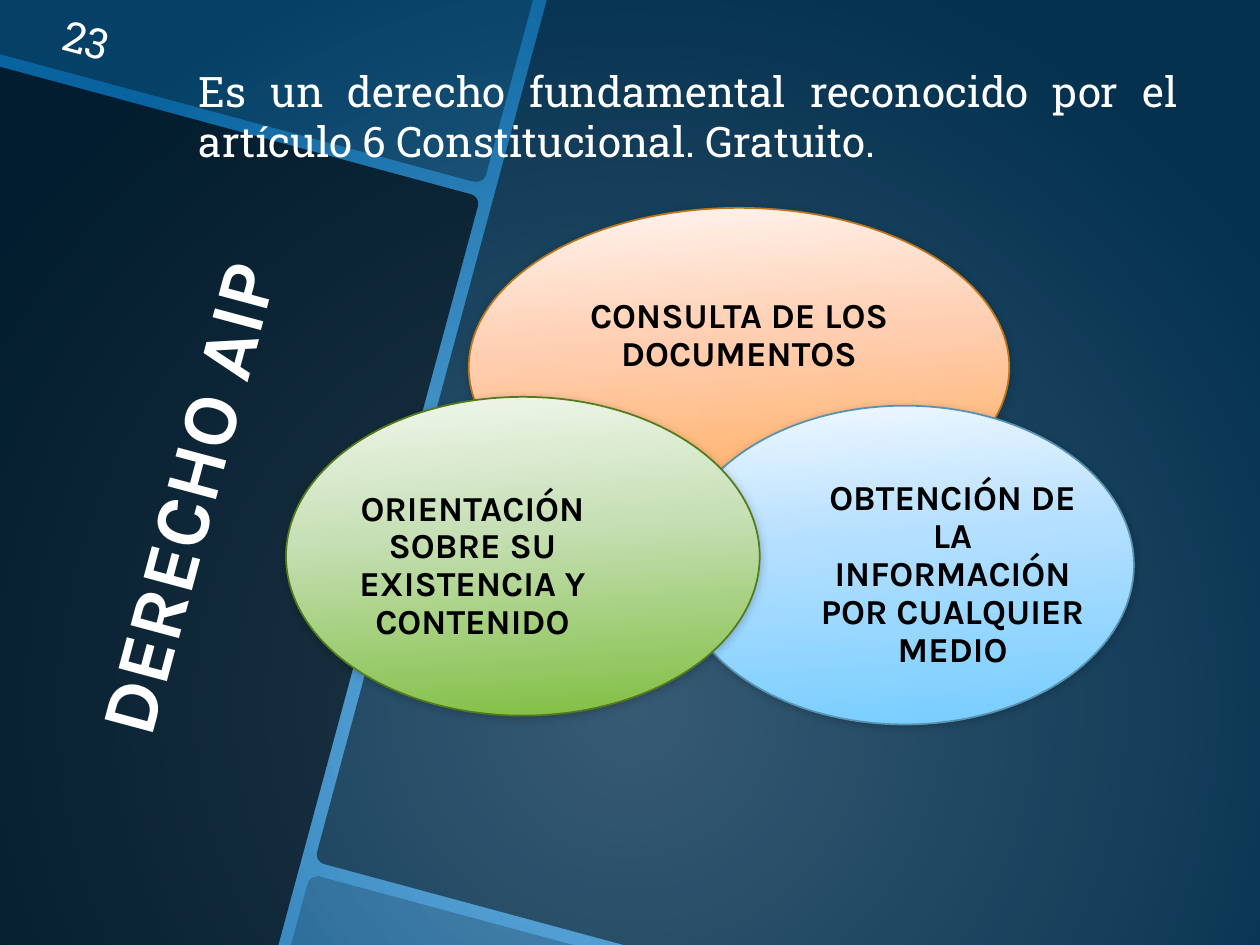
"""Build the slide on the right of access to public information."""
import dataclasses

import pptx
import pptx.dml.color
import pptx.enum.shapes
import pptx.enum.text
import pptx.oxml
import pptx.oxml.ns
import pptx.util
from lxml import etree

Inches = pptx.util.Inches
Pt = pptx.util.Pt
ALIGN = pptx.enum.text.PP_ALIGN
ANCHOR = pptx.enum.text.MSO_ANCHOR
qn = pptx.oxml.ns.qn


@dataclasses.dataclass(frozen=True)
class Theme:
    heading_font: str = "Karla"
    body_font: str = "Roboto Slab"
    title_size: int = 44
    body_size: int = 24
    label_size: int = 20
    light: str = "FFFFFF"
    dark: str = "000000"
    background: tuple = ((0, "70B6E8"), (100, "08639E"))
    orange: tuple = ("FFF4EF", "FFCEB1", "FFA84F", "BC7619")
    blue: tuple = ("F0F8FF", "B4DFFF", "75CDFF", "5792B1")
    green: tuple = ("F1F7ED", "C6DFB5", "7FBE3F", "537A1B")


def rgb(color):
    return pptx.dml.color.RGBColor.from_string(color)


def replace_gradient(element, stops, direction):
    gradient = element.find(".//" + qn("a:gradFill"))
    stop_xml = "".join(
        f'<a:gs pos="{position * 1000}"><a:srgbClr val="{color}"/></a:gs>'
        for position, color in stops)
    new_gradient = pptx.oxml.parse_xml(
        f'<a:gradFill {pptx.oxml.ns.nsdecls("a")} rotWithShape="1">'
        f"<a:gsLst>{stop_xml}</a:gsLst>{direction}</a:gradFill>")
    gradient.getparent().replace(gradient, new_gradient)


def bezier(start, control_1, control_2, end, steps=8):
    for step in range(1, steps + 1):
        t = step / steps
        weights = ((1 - t) ** 3, 3 * t * (1 - t) ** 2, 3 * t * t * (1 - t), t ** 3)
        points = (start, control_1, control_2, end)
        yield tuple(sum(w * p[axis] for w, p in zip(weights, points)) for axis in (0, 1))


class SlideBuilder:
    def __init__(self, slide, theme):
        self.slide = slide
        self.theme = theme

    def background(self):
        self.slide.background.fill.gradient()
        replace_gradient(
            self.slide.element, self.theme.background,
            '<a:path path="circle"><a:fillToRect l="50000" t="50000" r="50000" b="0"/></a:path>')

    def panel(self, outline, opacity):
        points = [outline[0]]
        for segment in outline[1:]:
            if len(segment) == 3:
                points.extend(bezier(points[-1], *segment))
            else:
                points.append(segment)
        vertices = [(Inches(x), Inches(y)) for x, y in points]
        builder = self.slide.shapes.build_freeform(*vertices[0])
        builder.add_line_segments(vertices[1:], close=True)
        shape = builder.convert_to_shape()
        shape.shadow.inherit = False
        shape.line.fill.background()
        shape.fill.solid()
        shape.fill.fore_color.rgb = rgb(self.theme.dark)
        color = shape.fill._xPr.find(".//" + qn("a:srgbClr"))
        etree.SubElement(color, qn("a:alpha"), val=str(opacity * 1000))

    def ellipse(self, box, colors):
        *stops, outline = colors
        shape = self.slide.shapes.add_shape(
            pptx.enum.shapes.MSO_SHAPE.OVAL, *map(Inches, box))
        shape.fill.gradient()
        replace_gradient(shape.element, zip((0, 42, 100), stops),
                         '<a:lin ang="5160000" scaled="0"/>')
        shape.line.color.rgb = rgb(outline)
        shape.line.width = Pt(1)
        shape.shadow.inherit = False
        effects = shape.element.spPr.find(qn("a:effectLst"))
        shadow = etree.SubElement(
            effects, qn("a:outerShdw"), blurRad=str(Pt(5)), dist=str(Pt(1)),
            dir="5400000", rotWithShape="0")
        color = etree.SubElement(shadow, qn("a:srgbClr"), val=self.theme.dark)
        etree.SubElement(color, qn("a:alpha"), val="20000")

    def text(self, box, text, font, size, color, align, anchor=ANCHOR.MIDDLE,
             bold=False, rotation=0):
        shape = self.slide.shapes.add_textbox(*map(Inches, box))
        shape.rotation = rotation
        frame = shape.text_frame
        frame.word_wrap = True
        frame.vertical_anchor = anchor
        paragraph = frame.paragraphs[0]
        paragraph.text = text
        paragraph.alignment = align
        paragraph.font.name = font
        paragraph.font.size = Pt(size)
        paragraph.font.bold = bold
        paragraph.font.color.rgb = rgb(color)
        return frame

    def label(self, box, text):
        theme = self.theme
        frame = self.text(box, text, theme.heading_font, theme.label_size, theme.dark,
                          ALIGN.CENTER, bold=True)
        frame.margin_left = frame.margin_right = frame.margin_top = frame.margin_bottom = 0
        frame.paragraphs[0].line_spacing = 0.9


def main():
    presentation = pptx.Presentation()
    presentation.slide_width = Inches(10)
    presentation.slide_height = Inches(7.5)
    theme = Theme()
    builder = SlideBuilder(
        presentation.slides.add_slide(presentation.slide_layouts[6]), theme)

    builder.background()
    panels = (
        (70, [(0, 0.53), (3.73, 1.54), ((3.78, 1.55), (3.81, 1.6), (3.79, 1.65)),
              (2.21, 7.5), (0, 7.5)]),
        (35, [(0, 0), (4.23, 0), (3.86, 1.38),
              ((3.85, 1.43), (3.8, 1.45), (3.75, 1.44)), (0, 0.43)]),
        (20, [(2.51, 6.96), ((2.52, 6.95), (2.54, 6.95), (2.55, 6.96)), (4.55, 7.5),
              (2.31, 7.5), (2.44, 7.02), ((2.45, 6.98), (2.48, 6.96), (2.51, 6.96))]),
        (50, [(4.34, 0), (10, 0), (10, 7.5), (4.95, 7.5), (2.58, 6.86),
              ((2.53, 6.85), (2.5, 6.8), (2.52, 6.75))]),
    )
    for opacity, outline in panels:
        builder.panel(outline, opacity)

    builder.text((-1.23, 3.26, 4.97, 1.27), "DERECHO AIP", theme.heading_font,
                 theme.title_size, theme.light, ALIGN.CENTER, ANCHOR.BOTTOM,
                 bold=True, rotation=285)
    builder.text((0.24, 0.09, 0.73, 0.4), "23", theme.body_font, theme.body_size,
                 theme.light, ALIGN.RIGHT, rotation=15)

    rights = (
        ((3.72, 1.65, 4.29, 2.53), theme.orange, (4.29, 2.1, 3.15, 1.14),
         "CONSULTA DE LOS DOCUMENTOS"),
        ((5.36, 3.22, 3.64, 2.53), theme.blue, (6.47, 3.87, 2.18, 1.39),
         "OBTENCIÓN DE LA INFORMACIÓN POR CUALQUIER MEDIO"),
        ((2.27, 3.15, 3.76, 2.53), theme.green, (2.62, 3.8, 2.26, 1.39),
         "ORIENTACIÓN SOBRE SU EXISTENCIA Y CONTENIDO"),
    )
    for ellipse_box, colors, label_box, text in rights:
        builder.ellipse(ellipse_box, colors)
        builder.label(label_box, text)

    builder.text((1.48, 0.47, 7.97, 0.91),
                 "Es un derecho fundamental reconocido por el artículo 6 "
                 "Constitucional. Gratuito.",
                 theme.body_font, theme.body_size, theme.light, ALIGN.JUSTIFY, ANCHOR.TOP)
    presentation.save("out.pptx")


if __name__ == "__main__":
    main()
